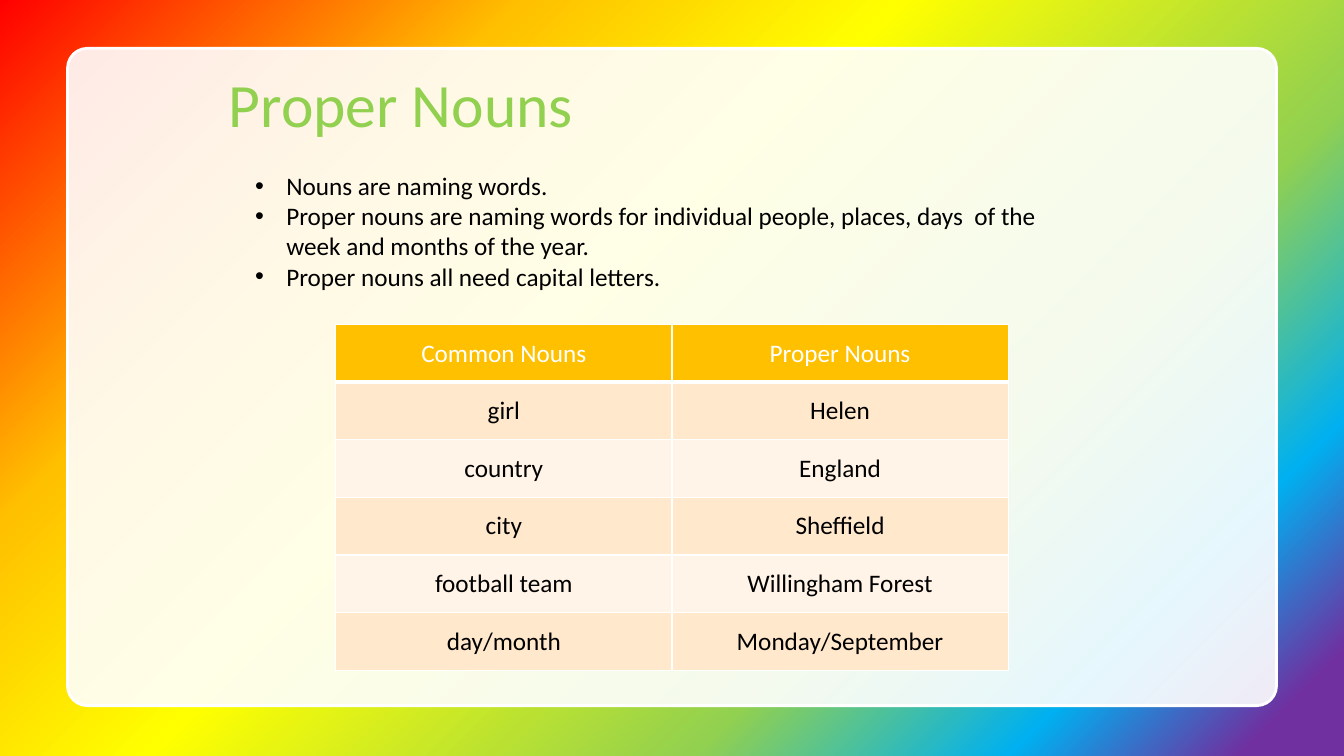
from dataclasses import dataclass

from lxml import etree
from pptx import Presentation
from pptx import util as u
from pptx.dml.color import RGBColor
from pptx.enum import shapes, text
from pptx.oxml import ns


@dataclass(frozen=True)
class Theme:
    """Colours, font and type sizes of the slide."""
    font: str = "Calibri"
    title: int = 44
    body: int = 18
    green: str = "92D050"
    gold: str = "FFC000"
    white: str = "FFFFFF"
    black: str = "000000"
    bands: tuple = ("FFE8CC", "FFF4E7")
    rainbow: tuple = ((5, "7030A0"), (16, "00B0F0"), (31, "92D050"),
                      (57, "FFFF00"), (75, "FFC000"), (100, "FF0000"))


THEME = Theme()
POINTS = (
    "Nouns are naming words.",
    "Proper nouns are naming words for individual people, places, days  of the "
    "week and months of the year.",
    "Proper nouns all need capital letters.",
)
NOUNS = (
    ("Common Nouns", "Proper Nouns"),
    ("girl", "Helen"),
    ("country", "England"),
    ("city", "Sheffield"),
    ("football team", "Willingham Forest"),
    ("day/month", "Monday/September"),
)


def box(*sides):
    """Turn a left, top, width and height in inches into lengths."""
    return [u.Inches(side) for side in sides]


def add_tag(parent, tag, **attrs):
    """Append an XML child with the given attributes."""
    return etree.SubElement(parent, ns.qn(tag), {k: str(v) for k, v in attrs.items()})


def add_run(para, words, size, color):
    """Add one styled run to a paragraph."""
    run = para.add_run()
    run.text = words
    font = run.font
    font.name, font.size, font.bold = THEME.font, u.Pt(size), False
    font.color.rgb = RGBColor.from_string(color)


def paint_back(slide):
    """Fill the background with a rainbow spreading from the lower right."""
    tree = slide.shapes.element
    back = etree.Element(ns.qn("p:bg"))
    tree.addprevious(back)
    props = add_tag(back, "p:bgPr")
    grad = add_tag(props, "a:gradFill", rotWithShape=1)
    stops = add_tag(grad, "a:gsLst")
    for place, color in THEME.rainbow:
        stop = add_tag(stops, "a:gs", pos=place * 1000)
        add_tag(stop, "a:srgbClr", val=color)
    spread = add_tag(grad, "a:path", path="circle")
    add_tag(spread, "a:fillToRect", l=100000, t=100000)
    add_tag(props, "a:effectLst")


def add_panel(slide):
    """Add the rounded, slightly clear white panel."""
    panel = slide.shapes.add_shape(
        shapes.MSO_SHAPE.ROUNDED_RECTANGLE, *box(0.67, 0.48, 11.99, 6.52))
    panel.adjustments[0] = 0.03
    panel.shadow.inherit = False
    white = RGBColor.from_string(THEME.white)
    panel.fill.solid()
    panel.fill.fore_color.rgb = white
    tint = next(panel.element.iter(ns.qn("a:srgbClr")))
    add_tag(tint, "a:alpha", val=90000)
    panel.line.color.rgb = white
    panel.line.width = u.Pt(2)


def add_title(slide, words):
    """Add the slide heading."""
    frame = slide.shapes.add_textbox(*box(2.17, 0.52, 8.99, 1.09)).text_frame
    frame.word_wrap = True
    frame.vertical_anchor = text.MSO_ANCHOR.MIDDLE
    para = frame.paragraphs[0]
    para.line_spacing = 0.9
    add_run(para, words, THEME.title, THEME.green)


def add_list(slide, points):
    """Add the bulleted facts."""
    frame = slide.shapes.add_textbox(*box(2.53, 1.61, 8.27, 1.37)).text_frame
    frame.word_wrap = True
    frame.auto_size = text.MSO_AUTO_SIZE.SHAPE_TO_FIT_TEXT
    frame.margin_left = frame.margin_right = 0
    frame.margin_top = frame.margin_bottom = u.Inches(0.08)
    indent = u.Inches(0.31)
    for i, point in enumerate(points):
        para = frame.add_paragraph() if i else frame.paragraphs[0]
        props = para._p.get_or_add_pPr()
        props.set("marL", str(indent))
        props.set("indent", str(-indent))
        add_tag(props, "a:buFont", typeface="Arial")
        add_tag(props, "a:buChar", char="•")
        add_run(para, point, THEME.body, THEME.black)


def add_edges(cell, base):
    """Draw white cell borders, with a chosen bottom width in points."""
    props = cell._tc.get_or_add_tcPr()
    for side, width in zip("LRTB", (1, 1, 1, base)):
        edge = add_tag(props, f"a:ln{side}", w=u.Pt(width))
        fill = add_tag(edge, "a:solidFill")
        add_tag(fill, "a:srgbClr", val=THEME.white)


def add_grid(slide, rows):
    """Add the table of common and proper nouns."""
    grid = slide.shapes.add_table(
        len(rows), len(rows[0]), *box(3.33, 3.22, 6.67, 3.43)).table
    for r, row in enumerate(rows):
        fill = THEME.bands[(r - 1) % 2] if r else THEME.gold
        color = THEME.black if r else THEME.white
        for c, words in enumerate(row):
            cell = grid.cell(r, c)
            add_edges(cell, 1 if r else 3)
            cell.fill.solid()
            cell.fill.fore_color.rgb = RGBColor.from_string(fill)
            cell.vertical_anchor = text.MSO_ANCHOR.MIDDLE
            para = cell.text_frame.paragraphs[0]
            para.alignment = text.PP_ALIGN.CENTER
            add_run(para, words, THEME.body, color)


def main():
    """Build and save the slide."""
    deck = Presentation()
    deck.slide_width, deck.slide_height = box(13.33, 7.5)
    slide = deck.slides.add_slide(deck.slide_layouts[6])
    paint_back(slide)
    add_panel(slide)
    add_title(slide, "Proper Nouns")
    add_list(slide, POINTS)
    add_grid(slide, NOUNS)
    deck.save("out.pptx")


if __name__ == "__main__":
    main()
